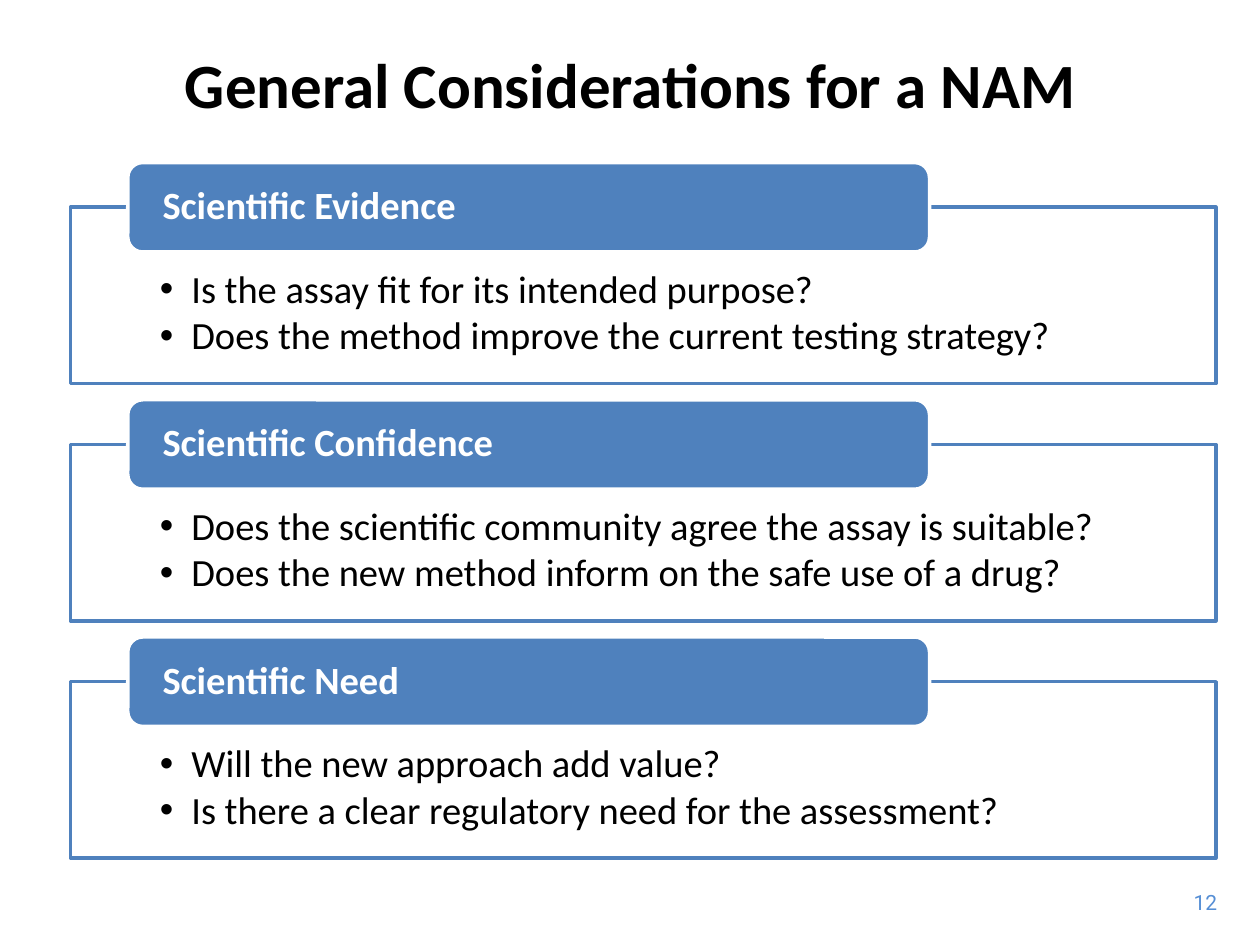
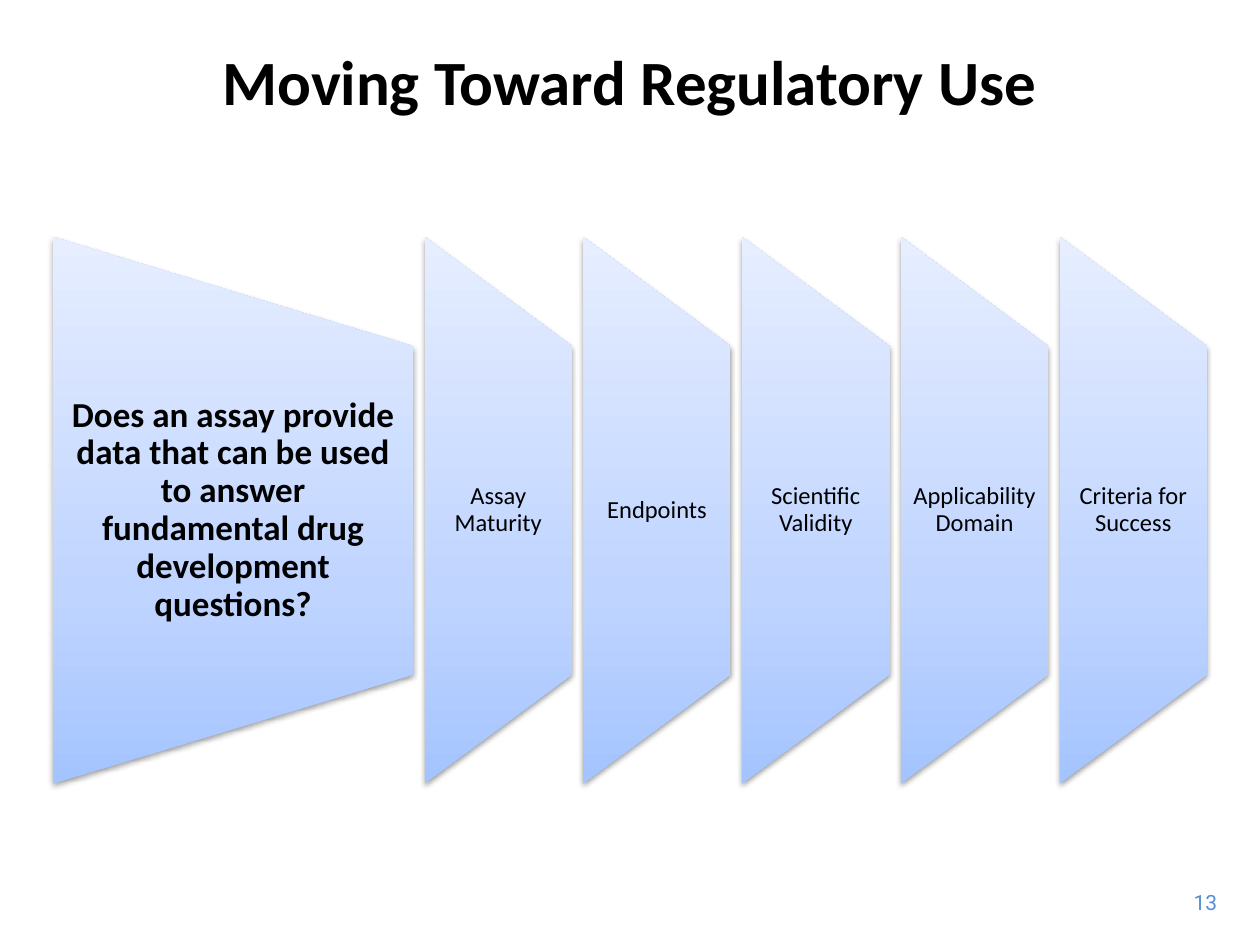
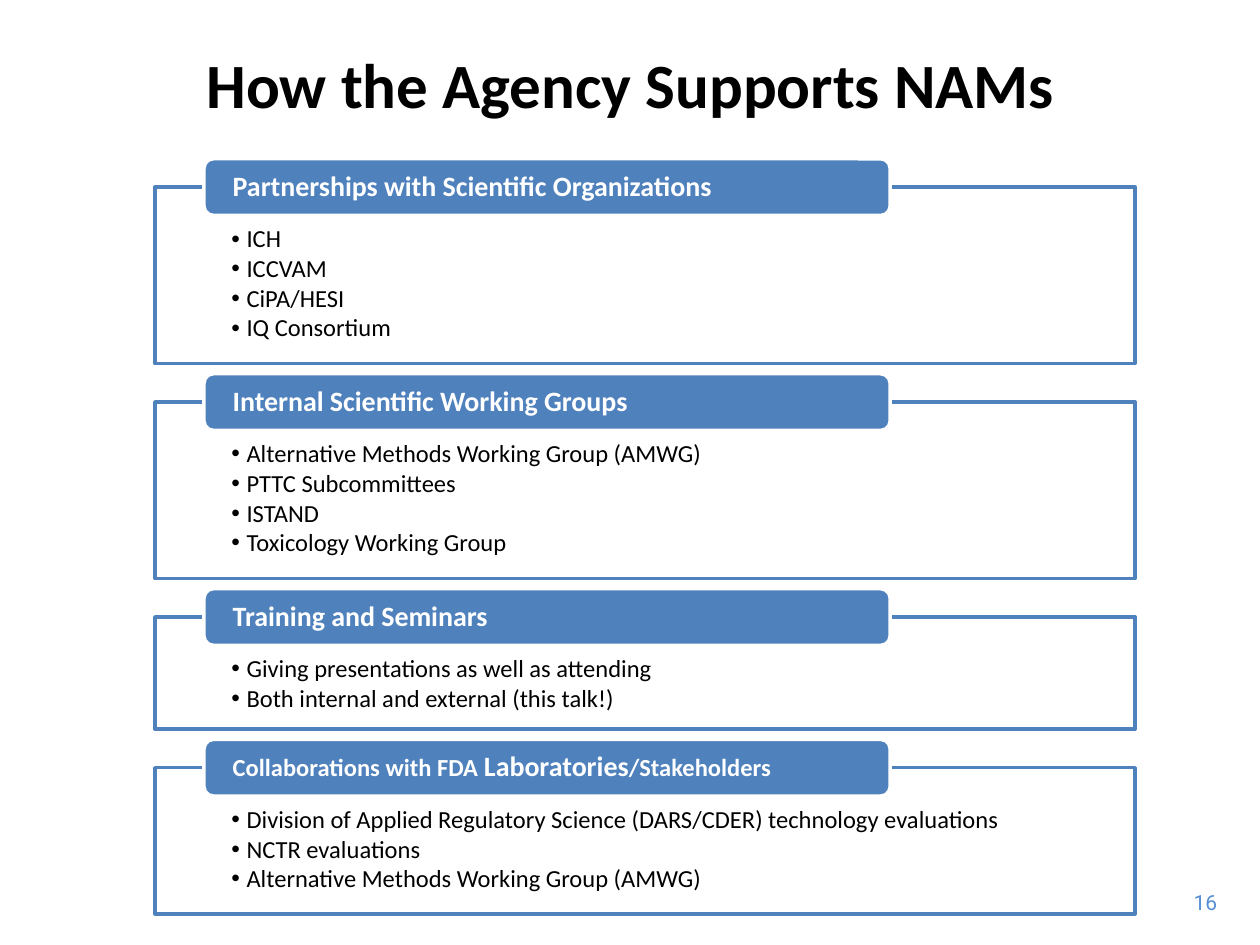
import lxml.etree
import pptx
import pptx.dml.color
import pptx.enum.shapes
import pptx.enum.text
import pptx.oxml
import pptx.oxml.ns
import pptx.util

WIDTH, HEIGHT = 10, 7.5
BLUE, WHITE, BLACK, NUMBER_BLUE = "4F81BD", "FFFFFF", "000000", "558ED5"
FAN_STOPS = [(0, "A4C4FF"), (35, "BFD4FF"), (100, "E6EEFF")]
TITLE_BOX = (0.35, 0.16, 9.31, 1.01)

SHAPE = pptx.enum.shapes.MSO_SHAPE
ALIGN = pptx.enum.text.PP_ALIGN
ANCHOR = pptx.enum.text.MSO_ANCHOR
qn = pptx.oxml.ns.qn
inches = pptx.util.Inches


def color(hex_text):
    return pptx.dml.color.RGBColor.from_string(hex_text)


def xml(markup):
    namespace = 'xmlns:a="http://schemas.openxmlformats.org/drawingml/2006/main"'
    return pptx.oxml.parse_xml(markup.replace(">", f" {namespace}>", 1))


# Shared text and shape helpers
def style(span, size, hex_text, bold=False, font="Calibri"):
    span.font.name, span.font.size = font, pptx.util.Pt(size)
    span.font.bold, span.font.color.rgb = bold, color(hex_text)


def set_frame(frame, insets, anchor, wrap=True):
    frame.word_wrap, frame.vertical_anchor = wrap, anchor
    (frame.margin_left, frame.margin_top,
     frame.margin_right, frame.margin_bottom) = map(inches, insets)


def add_text(page, box, text, size, hex_text=BLACK, bold=False, font="Calibri",
             align=ALIGN.CENTER, anchor=ANCHOR.MIDDLE, side=0.1, wrap=True):
    frame = page.shapes.add_textbox(*map(inches, box)).text_frame
    set_frame(frame, (side, 0.05, side, 0.05), anchor, wrap)
    frame.text = text
    para = frame.paragraphs[0]
    para.alignment = align
    style(para.runs[0], size, hex_text, bold, font)
    return para


def add_block(page, kind, box, fill, line):
    block = page.shapes.add_shape(kind, *map(inches, box))
    block.shadow.inherit = False
    block.fill.solid()
    block.fill.fore_color.rgb = color(fill)
    block.line.color.rgb, block.line.width = color(line), pptx.util.Pt(2)
    return block


def add_page(deck, title, number, title_box=TITLE_BOX):
    page = deck.slides.add_slide(deck.slide_layouts[6])
    add_text(page, (9.35, 7.01, 0.41, 0.3), str(number), 12, NUMBER_BLUE,
             font="Roboto", align=ALIGN.RIGHT, anchor=ANCHOR.TOP, wrap=False)
    add_text(page, title_box, title, 36, bold=True)
    return page


# Outlined list with a heading tab straddling its top edge
def add_section(page, box, tab_height, heading, bullets, size, indent):
    left, top, width, height = box
    body = add_block(page, SHAPE.RECTANGLE, box, WHITE, BLUE)
    fill_color = body.fill._xPr.find(qn("a:solidFill"))[0]
    fill_color.append(xml('<a:alpha val="90000"/>'.replace("/>", "></a:alpha>")))
    frame = body.text_frame
    side = 0.078 * width
    set_frame(frame, (side, 0.7 * tab_height, side, 0.24 * tab_height), ANCHOR.TOP)
    frame.text = "\n".join(bullets)
    for para in frame.paragraphs:
        para.level, para.alignment = 1, ALIGN.LEFT
        properties = para._p.get_or_add_pPr()
        properties.set("marL", str(inches(indent)))
        properties.set("indent", str(-inches(indent)))
        properties.append(xml('<a:buFont typeface="Arial"></a:buFont>'))
        properties.append(xml('<a:buChar char="•"></a:buChar>'))
        para.line_spacing, para.space_after = 0.9, pptx.util.Pt(0.13 * size)
        style(para.runs[0], size, BLACK)

    tab_box = (left + 0.05 * width, top - tab_height / 2, 0.7 * width, tab_height)
    tab = add_block(page, SHAPE.ROUNDED_RECTANGLE, tab_box, BLUE, WHITE)
    side = 0.0265 * width
    set_frame(tab.text_frame, (side, 0, side, 0), ANCHOR.MIDDLE)
    para = tab.text_frame.paragraphs[0]
    para.alignment, para.line_spacing = ALIGN.LEFT, 0.9
    for text, heading_size in heading:
        span = para.add_run()
        span.text = text
        style(span, heading_size, WHITE, bold=True)


def add_sections(page, left, top, width, tab_height, sections, size, indent):
    for height, heading, bullets in sections:
        box = (left, top + tab_height / 2, width, height)
        add_section(page, box, tab_height, heading, bullets, size, indent)
        top += tab_height / 2 + height + 0.18 * tab_height


# Tapering panel, a manual-operation shape turned on its side
def add_panel(page, box, text, size, bold, side):
    left, top, width, height = box
    turned = (left + (width - height) / 2, top + (height - width) / 2, height, width)
    panel = page.shapes.add_shape(SHAPE.FLOWCHART_MANUAL_OPERATION,
                                  *map(inches, turned))
    panel.rotation = 270
    panel.line.fill.background()
    stops = "".join(f'<a:gs pos="{share * 1000}"><a:srgbClr val="{tone}"/></a:gs>'
                    for share, tone in FAN_STOPS)
    properties = panel._element.spPr
    properties.find(qn("a:prstGeom")).addnext(xml(
        f'<a:gradFill rotWithShape="0"><a:gsLst>{stops}</a:gsLst>'
        '<a:lin ang="16200000" scaled="0"/></a:gradFill>'))
    properties.append(xml(
        '<a:effectLst><a:outerShdw blurRad="40000" dist="20000" dir="5400000" '
        f'rotWithShape="0"><a:srgbClr val="{BLACK}"><a:alpha val="38000"/>'
        '</a:srgbClr></a:outerShdw></a:effectLst>'))
    text_box = (left, top + 0.2 * height, width, 0.6 * height)
    add_text(page, text_box, text, size, bold=bold, side=side).line_spacing = 0.9


def add_fan(page, box, gap, question, topics):
    left, top, width, height = box
    topic_width = 1.17
    pitch = topic_width + gap
    question_width = width - len(topics) * pitch
    add_panel(page, (left, top, question_width, height), question, 20, True, 0.14)
    for index, topic in enumerate(topics):
        topic_left = left + question_width + gap + index * pitch
        add_panel(page, (topic_left, top, topic_width, height), topic, 14, False, 0.1)


def build_considerations(deck):
    page = add_page(deck, "General Considerations for a NAM", 12)
    topics = {
        "Scientific Evidence": ["Is the assay fit for its intended purpose?",
                                "Does the method improve the current testing strategy?"],
        "Scientific Confidence": ["Does the scientific community agree the assay is suitable?",
                                  "Does the new method inform on the safe use of a drug?"],
        "Scientific Need": ["Will the new approach add value?",
                            "Is there a clear regulatory need for the assessment?"],
    }
    sections = [(1.4, [(name, 22)], bullets) for name, bullets in topics.items()]
    add_sections(page, 0.56, 1.29, 9.09, 0.71, sections, 22, 0.25)


def build_regulatory_use(deck):
    page = add_page(deck, "Moving Toward Regulatory Use", 13, (0.85, 0.26, 8.29, 0.76))
    add_fan(page, (0.42, 1.88, 9.16, 4.34), 0.09,
            "Does an assay provide data that can be used to answer "
            "fundamental drug development questions?",
            ["Assay Maturity", "Endpoints", "Scientific Validity",
             "Applicability Domain", "Criteria for Success"])


def build_agency_support(deck):
    page = add_page(deck, "How the Agency Supports NAMs", 16)
    sections = [
        (1.4, [("Partnerships with Scientific Organizations", 16)],
         ["ICH", "ICCVAM", "CiPA/HESI", "IQ Consortium"]),
        (1.4, [("Internal Scientific Working Groups", 16)],
         ["Alternative Methods Working Group (AMWG)", "PTTC Subcommittees",
          "ISTAND", "Toxicology Working Group"]),
        (0.89, [("Training and Seminars", 16)],
         ["Giving presentations as well as attending",
          "Both internal and external (this talk!)"]),
        (1.16, [("Collaborations with FDA ", 14), ("Laboratories", 16),
                ("/Stakeholders", 14)],
         ["Division of Applied Regulatory Science (DARS/CDER) technology evaluations",
          "NCTR evaluations", "Alternative Methods Working Group (AMWG)"]),
    ]
    add_sections(page, 1.23, 1.26, 7.78, 0.45, sections, 14, 0.12)


def main():
    deck = pptx.Presentation()
    deck.slide_width, deck.slide_height = inches(WIDTH), inches(HEIGHT)
    build_considerations(deck)
    build_regulatory_use(deck)
    build_agency_support(deck)
    deck.save("out.pptx")


if __name__ == "__main__":
    main()
